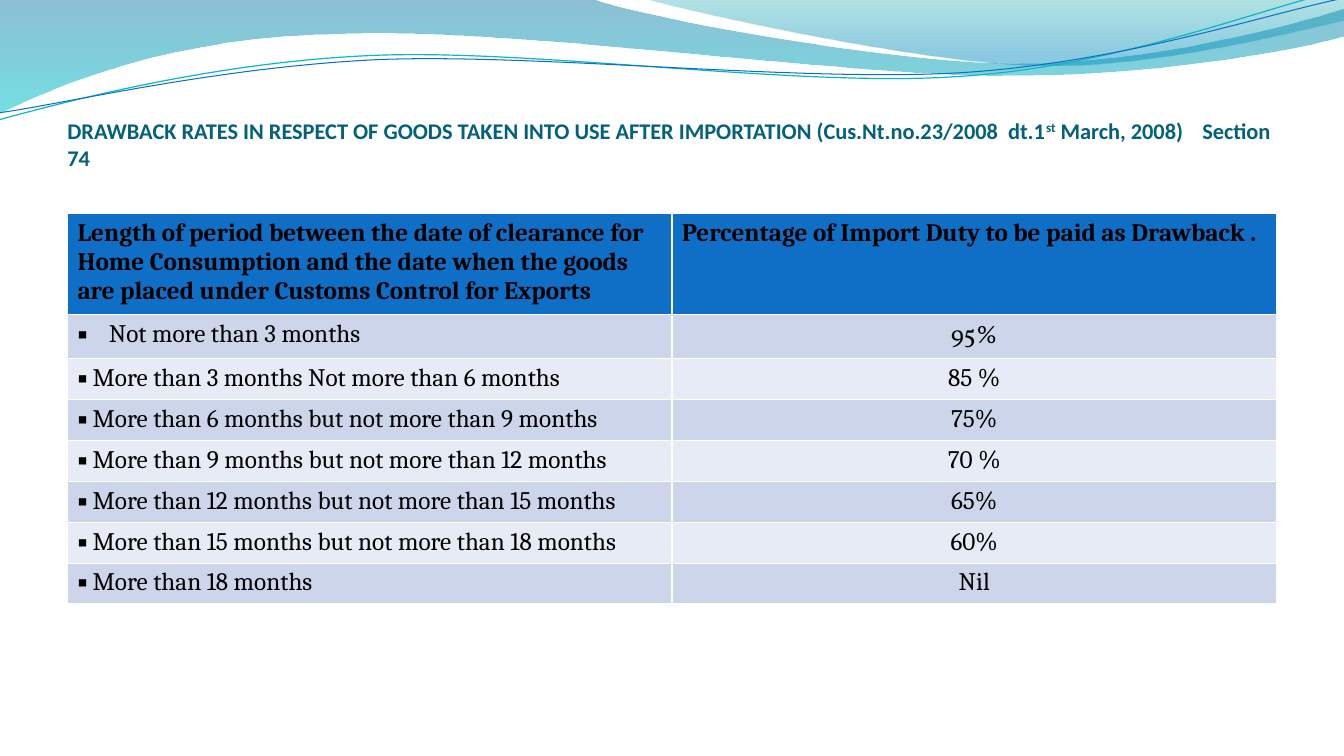
from lxml import etree
from pptx import Presentation
from pptx.dml.color import RGBColor
from pptx.enum.text import MSO_ANCHOR, PP_ALIGN
from pptx.oxml.ns import qn
from pptx.util import Cm, Pt

BOTTOM = MSO_ANCHOR.BOTTOM
LEFT, CENTER, JUSTIFY = PP_ALIGN.LEFT, PP_ALIGN.CENTER, PP_ALIGN.JUSTIFY

TITLE_TEAL = RGBColor(0x04, 0x61, 0x7B)
BLUE = RGBColor(0x0F, 0x6F, 0xC6)
TEAL = RGBColor(0x0A, 0xB8, 0xBF)
BLACK = RGBColor(0, 0, 0)
BANDS = [RGBColor(0xCC, 0xD5, 0xEA), RGBColor(0xE7, 0xEB, 0xF5)]

# Gradient stops: position, colour, opacity in percent
BROAD_STOPS = [(0, RGBColor(0x00, 0x74, 0xA1), 45), (1, RGBColor(0x00, 0xC6, 0xCF), 55)]
RIGHT_STOPS = [(0, RGBColor(0x00, 0xA1, 0xA9), 30), (0.8, RGBColor(0x00, 0x8B, 0xBF), 45)]

# Outlines in cm: a start, then segments of one point (line) or three (Bézier curve)
BROAD_WAVE = [
    [(0, 0)], [(14.91, -0.03)],
    [(16.1, 0.43), (22.48, 1.6), (25.68, 1.6)],
    [(28.91, 1.6), (32.46, 0.66), (33.86, 0.23)], [(33.91, 0.91)],
    [(33.3, 1.12), (29.46, 1.93), (25.25, 1.91)],
    [(21.06, 1.91), (12.93, 0.71), (8.71, 0.86)],
    [(4.34, 0.91), (1.55, 2.11), (-0.03, 2.87)],
]
RIGHT_WAVE = [
    [(16.23, -0.03)],
    [(17.25, 0.28), (23.09, 1.57), (26.04, 1.65)],
    [(28.98, 1.75), (32.56, 0.81), (33.86, 0.53)], [(33.86, 0)],
]
TEAL_LINE = [
    [(-0.03, 3.02)],
    [(1.63, 2.57), (5.36, 1.57), (9.37, 1.4)],
    [(13.39, 1.22), (20.07, 2.21), (24.13, 1.93)],
    [(28.19, 1.68), (31.8, 0.2), (33.81, -0.25)],
]
BLUE_LINE = [
    [(0, 2.84)],
    [(1.6, 2.62), (5.54, 1.68), (9.6, 1.5)],
    [(13.64, 1.35), (20.22, 2.08), (24.26, 1.83)],
    [(28.32, 1.57), (31.88, 0.36), (33.88, -0.05)],
]

HEADERS = [
    "Length of period between the date of clearance for Home Consumption and "
    "the date when the goods are placed under Customs Control for Exports",
    "Percentage of Import Duty to be paid as Drawback .",
]
RATES = [
    ("Not more than 3 months", "95%"),
    ("More than 3 months Not more than 6 months", "85 %"),
    ("More than 6 months but not more than 9 months", "75%"),
    ("More than 9 months but not more than 12 months", "70 %"),
    ("More than 12 months but not more than 15 months", "65%"),
    ("More than 15 months but not more than 18 months", "60%"),
    ("More than 18 months", "Nil"),
]


def add_outline(page, left, top, outline, closed):
    points = [(Cm(x), Cm(y)) for segment in outline for x, y in segment]
    builder = page.shapes.build_freeform(*points[0])
    builder.add_line_segments(points[1:], close=closed)
    shape = builder.convert_to_shape(left, top)
    shape.shadow.inherit = False
    # Join each three points of a curve into one Bézier segment
    steps = iter(list(shape._element.iter(qn("a:lnTo"))))
    for segment in outline[1:]:
        parts = [next(steps) for _ in segment]
        if len(parts) == 3:
            curve = etree.Element(qn("a:cubicBezTo"))
            parts[0].addprevious(curve)
            for part in parts:
                curve.append(part[0])
                part.getparent().remove(part)
    return shape


def add_waves(page, left, top):
    # Translucent gradient waves
    for outline, stops in ((BROAD_WAVE, BROAD_STOPS), (RIGHT_WAVE, RIGHT_STOPS)):
        wave = add_outline(page, left, top, outline, True)
        wave.line.fill.background()
        wave.fill.gradient()
        wave.fill.gradient_angle = 270
        for stop, (position, color, _) in zip(wave.fill.gradient_stops, stops):
            stop.position = position
            stop.color.rgb = color
        colors = wave._element.spPr.iter(qn("a:srgbClr"))
        for color, (_, _, opacity) in zip(colors, stops):
            etree.SubElement(color, qn("a:alpha"), val=str(opacity * 1000))
    # Thin lines
    for outline, color, width in ((TEAL_LINE, TEAL, 0.85), (BLUE_LINE, BLUE, 0.75)):
        line = add_outline(page, left, top, outline, False)
        line.fill.background()
        line.line.color.rgb = color
        line.line.width = Pt(width)


def set_font(para, name, size, color, bold):
    para.font.name = name
    para.font.size = Pt(size)
    para.font.color.rgb = color
    para.font.bold = bold


def add_title(page, left, top, width, height):
    box = page.shapes.add_textbox(left, top, width, height)
    frame = box.text_frame
    frame.word_wrap = True
    frame.vertical_anchor = BOTTOM
    frame.margin_left = frame.margin_right = frame.margin_bottom = 0
    para = frame.paragraphs[0]
    set_font(para, "Calibri", 16, TITLE_TEAL, True)
    para.add_run().text = ("DRAWBACK RATES IN RESPECT OF GOODS TAKEN INTO USE "
                           "AFTER IMPORTATION (Cus.Nt.no.23/2008  dt.1")
    ordinal = para.add_run()
    ordinal.text = "st"
    ordinal.font._element.set("baseline", "30000")
    para.add_run().text = " March, 2008)\tSection 74"
    # Tab stop that sets the section number apart
    tabs = etree.Element(qn("a:tabLst"))
    etree.SubElement(tabs, qn("a:tab"), pos=str(Cm(28.6)), algn="l")
    para._p.get_or_add_pPr().insert(0, tabs)


def add_bullet(para, indent):
    properties = para._p.get_or_add_pPr()
    properties.set("marL", str(indent))
    properties.set("indent", str(-indent))
    defaults = properties.find(qn("a:defRPr"))
    defaults.addprevious(etree.Element(qn("a:buFont"), typeface="Cambria"))
    defaults.addprevious(etree.Element(qn("a:buChar"), char="▪"))


def add_rates_table(page, left, top, width, row_heights):
    rows = [HEADERS, *RATES]
    table = page.shapes.add_table(
        len(rows), 2, left, top, width, sum(row_heights)).table
    for row_index, texts in enumerate(rows):
        header, first = row_index == 0, row_index == 1
        table.rows[row_index].height = row_heights[row_index]
        for column_index, text in enumerate(texts):
            cell = table.cell(row_index, column_index)
            cell.fill.solid()
            cell.fill.fore_color.rgb = BLUE if header else BANDS[(row_index - 1) % 2]
            cell.text = text
            para = cell.text_frame.paragraphs[0]
            name = "Vollkorn" if first and column_index == 1 else "Cambria"
            set_font(para, name, 18, BLACK, header)
            if header:
                continue
            if not first:
                para.space_before = Pt(1)
            if column_index == 1:
                para.alignment = CENTER
            else:
                para.alignment = LEFT if first else JUSTIFY
                add_bullet(para, Cm(0.79) if first else Cm(0.38))


def main():
    deck = Presentation()
    deck.slide_width, deck.slide_height = Cm(33.87), Cm(19.05)
    page = deck.slides.add_slide(deck.slide_layouts[6])
    margin = Cm(1.7)
    content_width = deck.slide_width - 2 * margin
    add_waves(page, 0, 0)
    add_title(page, margin, Cm(1.95), content_width, Cm(2.36))
    row_heights = [Cm(2.44), Cm(1.12)] + [Cm(1.03)] * (len(RATES) - 1)
    add_rates_table(page, margin, Cm(5.38), content_width, row_heights)
    deck.save("out.pptx")


if __name__ == "__main__":
    main()
